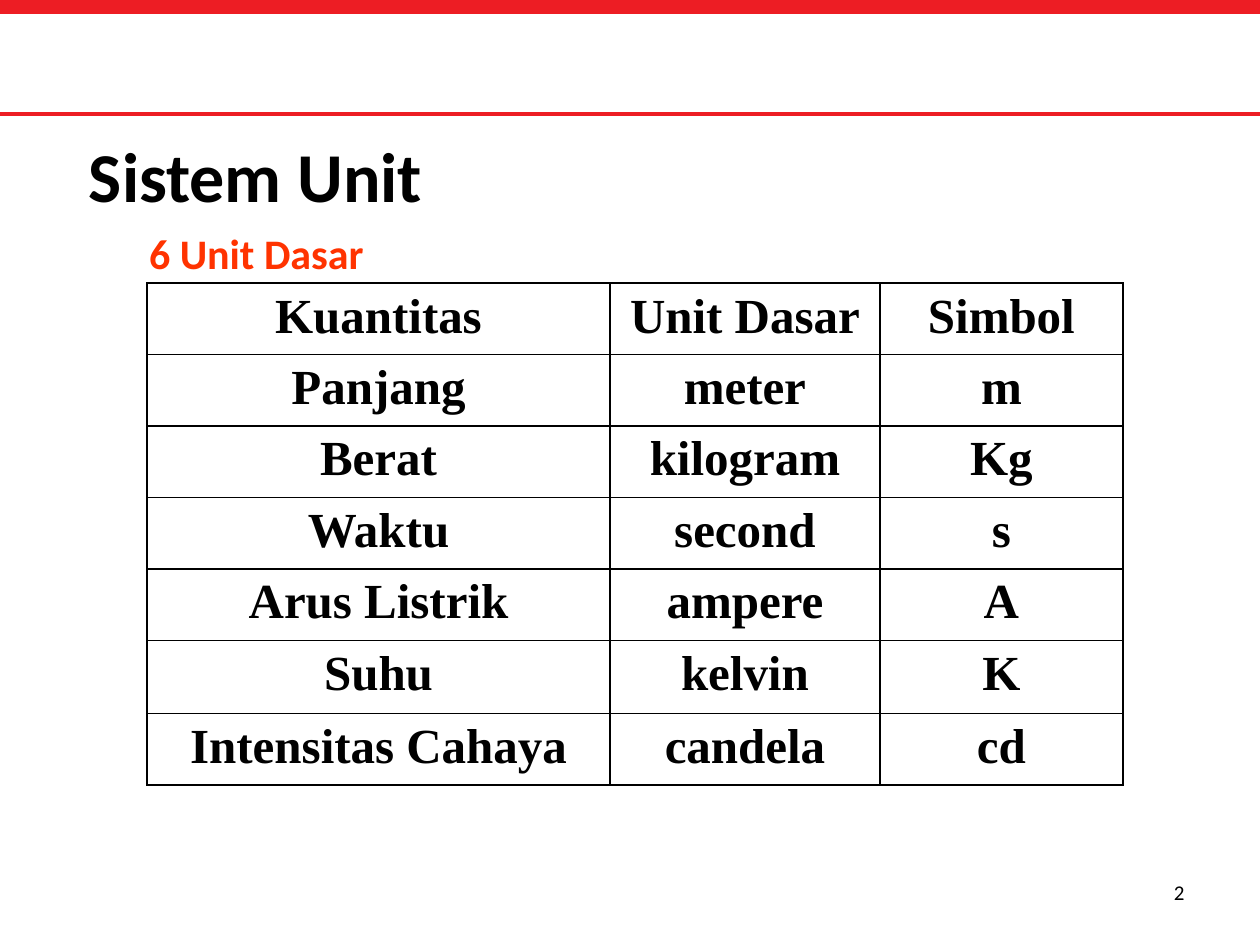
from lxml import etree
from pptx import Presentation
from pptx.dml.color import RGBColor
from pptx.enum.shapes import MSO_SHAPE
from pptx.enum.text import MSO_ANCHOR as ANCHOR, PP_ALIGN as ALIGN
from pptx.oxml.ns import qn
from pptx.util import Pt

PX = 914400 // 126
RED = RGBColor(0xED, 0x1D, 0x24)
ORANGE = RGBColor(0xFF, 0x33, 0x00)
BLACK = RGBColor(0, 0, 0)


def style(p, size, color, bold, font="Calibri", align=ALIGN.LEFT):
    p.alignment = align
    for r in p.runs:
        r.font.name = font
        r.font.size = Pt(size)
        r.font.bold = bold
        r.font.color.rgb = color


def border(cell, width):
    """Draw a solid black line on all four sides of a cell."""
    tc_pr = cell._tc.get_or_add_tcPr()
    for i, side in enumerate(("a:lnL", "a:lnR", "a:lnT", "a:lnB")):
        ln = etree.Element(qn(side), w=str(Pt(width)))
        fill = etree.SubElement(ln, qn("a:solidFill"))
        etree.SubElement(fill, qn("a:srgbClr"), val=str(BLACK))
        tc_pr.insert(i, ln)


prs = Presentation()
prs.slide_width, prs.slide_height = 1260 * PX, 945 * PX
s = prs.slides.add_slide(prs.slide_layouts[6])

for top, height in ((0, 14), (112, 4)):
    bar = s.shapes.add_shape(MSO_SHAPE.RECTANGLE, 0, top * PX, prs.slide_width, height * PX)
    bar.shadow.inherit = False
    bar.fill.solid()
    bar.fill.fore_color.rgb = RED
    bar.line.fill.background()

# text, left, top, width, height, left margin, size, colour, bold, align, anchor
texts = [
    ("2", 903, 861, 294, 63, 13, 12, BLACK, False, ALIGN.RIGHT, ANCHOR.MIDDLE),
    ("Sistem Unit", 60, 84, 1137, 181, 29, 40, BLACK, True, ALIGN.LEFT, ANCHOR.MIDDLE),
    ("6 Unit Dasar", 136, 221, 420, 63, 13, 24, ORANGE, True, ALIGN.LEFT, ANCHOR.TOP),
]
for text, x, y, w, h, margin, size, color, bold, align, anchor in texts:
    tf = s.shapes.add_textbox(x * PX, y * PX, w * PX, h * PX).text_frame
    tf.word_wrap = True
    tf.vertical_anchor = anchor
    tf.margin_left = margin * PX
    tf.text = text
    style(tf.paragraphs[0], size, color, bold, align=align)

units = [
    ("Kuantitas", "Unit Dasar", "Simbol"),
    ("Panjang", "meter", "m"),
    ("Berat", "kilogram", "Kg"),
    ("Waktu", "second", "s"),
    ("Arus Listrik", "ampere", "A"),
    ("Suhu", "kelvin", "K"),
    ("Intensitas Cahaya", "candela", "cd"),
]
col_widths = (463, 270, 243)
row_heights = (67, 69, 69, 70, 69, 73, 69)
table = s.shapes.add_table(
    len(units), len(col_widths), 147 * PX, 283 * PX,
    sum(col_widths) * PX, sum(row_heights) * PX).table
for column, width in zip(table.columns, col_widths):
    column.width = width * PX
for row, height, values in zip(table.rows, row_heights, units):
    row.height = height * PX
    for cell, value in zip(row.cells, values):
        cell.text = value
        cell.fill.background()
        border(cell, 1)
        style(cell.text_frame.paragraphs[0], 28, BLACK, True, "Times New Roman", ALIGN.CENTER)

prs.save("out.pptx")
